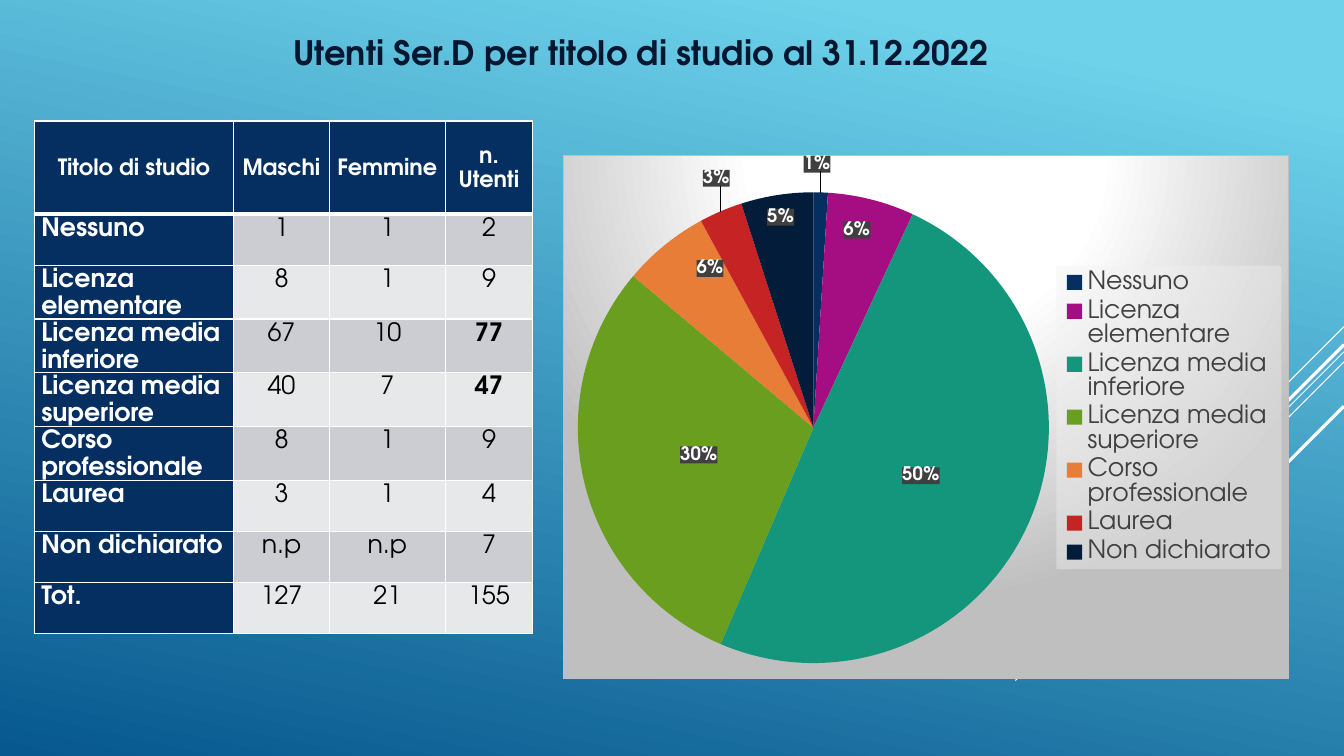
import copy

import pptx
import pptx.chart.data
import pptx.dml.color
import pptx.enum.chart
import pptx.enum.text
import pptx.oxml
import pptx.oxml.ns
import pptx.util

Pt = pptx.util.Pt
qn = pptx.oxml.ns.qn
FACE = "TeX Gyre Adventor"
NAVY, WHITE, BLACK = "052F61", "FFFFFF", "000000"
BANDS = ("CCCDD2", "E7E8EA")
NAMES = ["Nessuno", "Licenza elementare", "Licenza media inferiore",
         "Licenza media superiore", "Corso professionale", "Laurea",
         "Non dichiarato"]
HEADS = ["Titolo di studio", "Maschi", "Femmine", "n. Utenti"]
COUNTS = [("1", "1", "2"), ("8", "1", "9"), ("67", "10", "77"),
          ("40", "7", "47"), ("8", "1", "9"), ("3", "1", "4"),
          ("n.p", "n.p", "7"), ("127", "21", "155")]
SHARES = [1, 6, 50, 30, 6, 3, 5]
HUES = [NAVY, "A50E82", "14967C", "6A9E1F", "E87D37", "C62324", "031C3A"]
# Label shifts as fractions of the chart: slice -> (x, y)
SHIFTS = {0: (0, -0.28), 1: (0.02, -0.16), 4: (-0.04, -0.13),
          5: (-0.07, -0.27), 6: (-0.02, -0.18)}
# Diagonal lines at 45 degrees: height at the right edge, run, width
RAYS = [(233.3, 72, 0.75), (251.3, 234.7, 0.75), (258.5, 149, 0.75),
        (246.2, 137.5, 2.25), (290.2, 100, 2.25)]


def color(code):
    return pptx.dml.color.RGBColor.from_string(code)


def node(tag, body="", attrs=""):
    spaces = pptx.oxml.ns.nsdecls("a", "c")
    return pptx.oxml.parse_xml(f"<{tag} {spaces} {attrs}>{body}</{tag}>")


def style(font, size, code, bold=False):
    font.name, font.size, font.bold = FACE, Pt(size), bold
    font.color.rgb = color(code)


def paint(slide):
    fill = slide.background.fill
    fill.gradient()
    fill.gradient_angle = 258
    for stop, place, code in zip(fill.gradient_stops, (0.1, 1),
                                 ("6ED2EB", "06588E")):
        stop.position = place
        stop.color.rgb = color(code)


def add_ray(slide, top, run, width):
    edge = 960
    ray = slide.shapes.add_connector(
        pptx.enum.shapes.MSO_CONNECTOR.STRAIGHT,
        Pt(edge), Pt(top), Pt(edge - run), Pt(top + run))
    ray.line.color.rgb = color(WHITE)
    ray.line.width = Pt(width)
    ray._element.spPr.append(node("a:effectLst"))


def add_title(slide, text):
    box = slide.shapes.add_textbox(Pt(202.3), Pt(19.4), Pt(535.7), Pt(36))
    box.text_frame.word_wrap = True
    box.text_frame.text = text
    style(box.text_frame.paragraphs[0].runs[0].font, 24, "031730", True)


def set_edges(cell, top, base):
    props = cell._tc.get_or_add_tcPr()
    widths = {"lnL": 1, "lnR": 1, "lnT": top, "lnB": base}
    for spot, (side, width) in enumerate(widths.items()):
        props.insert(spot, node(
            f"a:{side}", f'<a:solidFill><a:srgbClr val="{WHITE}"/></a:solidFill>',
            f'w="{Pt(width)}"'))


def fill_cell(cell, text, row, col):
    head, side = row == 0, col == 0
    anchor = pptx.enum.text.MSO_ANCHOR
    cell.margin_left = cell.margin_right = Pt(5)
    cell.margin_top = cell.margin_bottom = 0
    cell.vertical_anchor = anchor.MIDDLE if head else anchor.TOP
    cell.fill.solid()
    cell.fill.fore_color.rgb = color(NAVY if head or side else BANDS[(row - 1) % 2])
    set_edges(cell, 3 if row == 1 else 1, 3 if head else 1)
    cell.text_frame.text = text
    para = cell.text_frame.paragraphs[0]
    para.line_spacing, para.space_after = 1.15, Pt(10)
    if head or not side:
        para.alignment = pptx.enum.text.PP_ALIGN.CENTER
    style(para.runs[0].font, 16 if head else 18,
          WHITE if head or side else BLACK,
          head or side or text in ("77", "47"))


def add_grid(slide):
    rows = [HEADS] + [[name, *nums] for name, nums in zip(NAMES + ["Tot."], COUNTS)]
    widths = (142.4, 68.4, 82.8, 62.4)
    grid = slide.shapes.add_table(len(rows), len(HEADS), Pt(24.5), Pt(86.4),
                                  Pt(sum(widths)), Pt(358.6)).table
    for col, width in zip(grid.columns, widths):
        col.width = Pt(width)
    for row, texts in enumerate(rows):
        grid.rows[row].height = Pt(36.5 if row else 66.6)
        for col, text in enumerate(texts):
            fill_cell(grid.cell(row, col), text, row, col)


def layout(x, y, size=None, inner=False):
    body = '<c:layoutTarget val="inner"/>' if inner else ""
    if size:
        body += '<c:xMode val="edge"/><c:yMode val="edge"/>'
    body += f'<c:x val="{x}"/><c:y val="{y}"/>'
    if size:
        body += f'<c:w val="{size[0]}"/><c:h val="{size[1]}"/>'
    return node("c:layout", f"<c:manualLayout>{body}</c:manualLayout>")


def set_layout(part, spot, new):
    for old in part.findall(qn("c:layout")):
        part.remove(old)
    part.insert(spot, new)


def tint(code, alpha):
    return node("c:spPr", f'<a:solidFill><a:srgbClr val="{code}">'
                f'<a:alpha val="{alpha * 1000}"/></a:srgbClr></a:solidFill>')


def set_labels(series):
    labels = series.data_labels
    labels.show_percentage, labels.show_value = True, False
    labels.number_format, labels.number_format_is_linked = "0%", False
    labels.position = pptx.enum.chart.XL_LABEL_POSITION.CENTER
    style(labels.font, 13.3, WHITE, True)
    root = labels._element
    root.find(qn("c:txPr")).addprevious(tint("404040", 90))
    shared = [part for part in root if part.tag != qn("c:showLeaderLines")]
    for spot, (index, shift) in enumerate(SHIFTS.items()):
        label = node("c:dLbl", f'<c:idx val="{index}"/>')
        label.append(layout(*shift))
        label.extend(copy.deepcopy(part) for part in shared)
        root.insert(spot, label)
    if root.find(qn("c:showLeaderLines")) is None:
        root.append(node("c:showLeaderLines", attrs='val="1"'))


def set_back(chart):
    stops = "".join(
        f'<a:gs pos="{place * 1000}"><a:srgbClr val="{code}"/></a:gs>'
        for place, code in ((0, WHITE), (39, WHITE), (100, "BFBFBF")))
    back = node("c:spPr", f'<a:gradFill><a:gsLst>{stops}</a:gsLst>'
                '<a:path path="circle"><a:fillToRect l="50000" t="-80000" '
                'r="50000" b="180000"/></a:path></a:gradFill>'
                f'<a:ln w="{Pt(0.75)}"><a:solidFill><a:srgbClr val="BFBFBF"/>'
                '</a:solidFill></a:ln>')
    chart._chartSpace.find(qn("c:chart")).addnext(back)


def add_pie(slide):
    data = pptx.chart.data.CategoryChartData()
    data.categories = NAMES
    data.add_series("Utenti", SHARES)
    chart = slide.shapes.add_chart(
        pptx.enum.chart.XL_CHART_TYPE.PIE, Pt(401.8), Pt(110.9),
        Pt(519.1), Pt(374.4), data).chart
    chart.has_title = False
    style(chart.font, 10, WHITE)
    set_back(chart)
    # Slices and their labels
    plot = chart.plots[0]
    plot.vary_by_categories = True
    series = plot.series[0]
    for index, hue in enumerate(HUES):
        fill = series.points[index].format.fill
        fill.solid()
        fill.fore_color.rgb = color(hue)
    set_labels(series)
    area = chart._chartSpace.find(qn("c:chart")).find(qn("c:plotArea"))
    set_layout(area, 0, layout(0.02, 0.07, (0.65, 0.9), True))
    # Legend
    chart.has_legend = True
    legend = chart.legend
    legend.position = pptx.enum.chart.XL_LEGEND_POSITION.RIGHT
    legend.include_in_layout = False
    style(legend.font, 18, "404040")
    root = legend._element
    set_layout(root, 1, layout(0.68, 0.21, (0.31, 0.58)))
    root.find(qn("c:txPr")).addprevious(tint("F2F2F2", 39))


def main():
    deck = pptx.Presentation()
    deck.slide_width, deck.slide_height = Pt(960), Pt(540)
    slide = deck.slides.add_slide(deck.slide_layouts[6])
    # Backdrop
    paint(slide)
    for ray in RAYS:
        add_ray(slide, *ray)
    # Content
    add_grid(slide)
    add_title(slide, "Utenti Ser.D per titolo di studio al 31.12.2022")
    add_pie(slide)
    deck.save("out.pptx")


if __name__ == "__main__":
    main()
